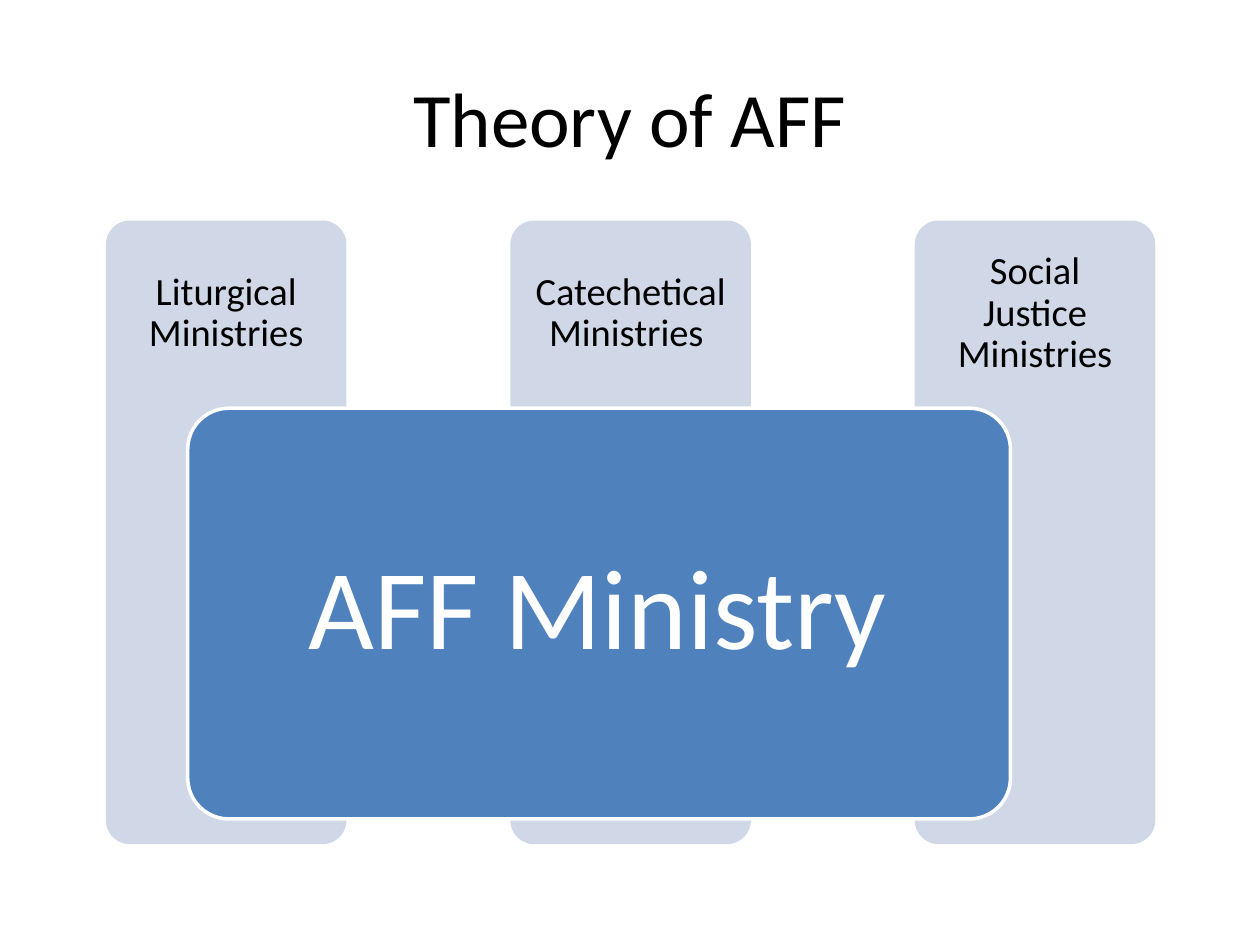
from pptx import Presentation
from pptx.dml.color import RGBColor
from pptx.enum.shapes import MSO_SHAPE
from pptx.enum.text import MSO_ANCHOR, PP_ALIGN
from pptx.util import Inches, Pt

ROUND = MSO_SHAPE.ROUNDED_RECTANGLE
MIDDLE = MSO_ANCHOR.MIDDLE
CENTER = PP_ALIGN.CENTER

PILLARS = ["Liturgical Ministries", "Catechetical Ministries ",
           "Social Justice Ministries"]
LEFT, TOP, STEP = 0.84, 1.75, 3.21
WIDTH, HEIGHT, HEAD = 1.91, 4.95, 1.48


def color(code):
    return RGBColor.from_string(code)


def assign(item, values):
    for name, value in values.items():
        setattr(item, name, value)


class Deck:
    font = "Calibri"
    dark, light = "000000", "FFFFFF"
    pale, blue = "D0D8E8", "4F81BD"

    def __init__(self):
        self.file = Presentation()
        assign(self.file, {"slide_width": Inches(10),
                           "slide_height": Inches(7.5)})
        self.slide = self.file.slides.add_slide(self.file.slide_layouts[5])

    def letter(self, frame, text, size, ink, inset, lines=1.0):
        """Fill a text frame with one centred paragraph."""
        margins = ("margin_left", "margin_top", "margin_right", "margin_bottom")
        frame.text = text
        assign(frame, {"word_wrap": True, "vertical_anchor": MIDDLE})
        assign(frame, dict.fromkeys(margins, Inches(inset)))
        para = frame.paragraphs[0]
        assign(para, {"alignment": CENTER, "line_spacing": lines})
        font = para.runs[0].font
        assign(font, {"name": self.font, "size": Pt(size)})
        font.color.rgb = color(ink)

    def title(self, text, *box):
        shape = self.slide.shapes.title
        places = ("left", "top", "width", "height")
        assign(shape, dict(zip(places, map(Inches, box))))
        self.letter(shape.text_frame, text, 44, self.dark, 0.1)

    def panel(self, box, fill, edge=None):
        shape = self.slide.shapes.add_shape(ROUND, *map(Inches, box))
        shape.shadow.inherit = False
        shape.adjustments[0] = 0.1
        shape.fill.solid()
        shape.fill.fore_color.rgb = color(fill)
        if edge:
            shape.line.color.rgb = color(edge)
            shape.line.width = Pt(2)
        else:
            shape.line.fill.background()

    def label(self, box, text, size, ink, inset):
        shape = self.slide.shapes.add_textbox(*map(Inches, box))
        self.letter(shape.text_frame, text, size, ink, inset, 0.9)


def main():
    deck = Deck()
    deck.title("Theory of AFF", 0.5, 0.3, 9, 1.25)
    for i, name in enumerate(PILLARS):
        left = LEFT + i * STEP
        deck.panel((left, TOP, WIDTH, HEIGHT), deck.pale)
        deck.label((left, TOP, WIDTH, HEAD), name, 22, deck.dark, 0.17)
    deck.panel((1.49, 3.24, 6.53, 3.26), deck.blue, deck.light)
    deck.label((1.58, 3.33, 6.33, 3.07), "AFF Ministry", 65, deck.light, 0.05)
    deck.file.save("out.pptx")


if __name__ == "__main__":
    main()
